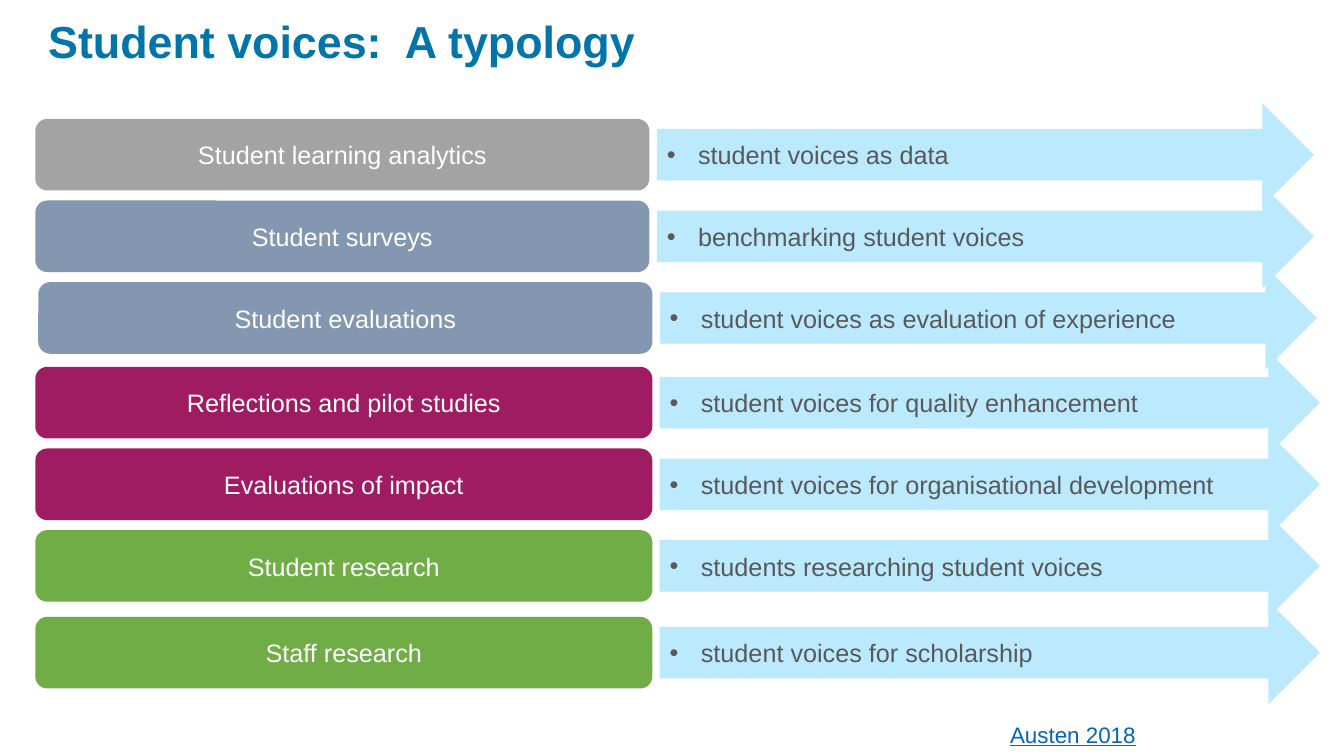
from dataclasses import dataclass

from lxml.etree import SubElement
from pptx import Presentation
from pptx.dml.color import RGBColor
from pptx.enum.shapes import MSO_SHAPE
from pptx.enum.text import MSO_ANCHOR, PP_ALIGN
from pptx.oxml.ns import qn
from pptx.shapes.autoshape import Shape
from pptx.slide import Slide
from pptx.text.text import _Paragraph
from pptx.util import Emu, Inches, Pt

WIDE = Inches(13.33)
HIGH = Inches(7.5)


@dataclass(frozen=True)
class Theme:
    font: str = "Arial"
    title: str = "0075AA"
    grey: str = "A3A3A3"
    slate: str = "8497B0"
    plum: str = "9F1C63"
    green: str = "70AD47"
    arrow: str = "BBEAFF"
    white: str = "FFFFFF"
    ink: str = "595959"
    link: str = "0563C1"
    large: int = 32
    body: int = 18
    small: int = 16


@dataclass(frozen=True)
class Box:
    left: float
    top: float
    width: float
    height: float

    def place(self) -> tuple[Emu, Emu, Emu, Emu]:
        return (
            Emu(round(WIDE * self.left / 100)),
            Emu(round(HIGH * self.top / 100)),
            Emu(round(WIDE * self.width / 100)),
            Emu(round(HIGH * self.height / 100)),
        )


@dataclass(frozen=True)
class Lane:
    left: float
    width: float


@dataclass(frozen=True)
class Row:
    label: str
    voice: str
    fill: str
    top: float
    lane: Lane


THEME = Theme()
PITCH = 10.8
UPPER = 15.73
LOWER = 48.53
LAST = 81.6
BAR_HIGH = 9.47
ARROW_HIGH = 13.6
ARROW_RATIO = 1.07
GAP = 0.55
INDENT = Inches(0.31)

SHORT = Lane(2.63, 45.69)
SHIFTED = Lane(2.85, 45.69)
LONG = Lane(2.63, 45.91)

ROWS = [
    Row("Student learning analytics", "student voices as data",
        THEME.grey, UPPER, SHORT),
    Row("Student surveys", "benchmarking student voices",
        THEME.slate, UPPER + PITCH, SHORT),
    Row("Student evaluations", "student voices as evaluation of experience",
        THEME.slate, UPPER + 2 * PITCH, SHIFTED),
    Row("Reflections and pilot studies", "student voices for quality enhancement",
        THEME.plum, LOWER, LONG),
    Row("Evaluations of impact", "student voices for organisational development",
        THEME.plum, LOWER + PITCH, LONG),
    Row("Student research", "students researching student voices",
        THEME.green, LOWER + 2 * PITCH, LONG),
    Row("Staff research", "student voices for scholarship",
        THEME.green, LAST, LONG),
]


def add_run(para: _Paragraph, text: str, size: int, colour: str,
            bold: bool = False, under: bool = False) -> None:
    run = para.add_run()
    run.text = text
    font = run.font
    font.name = THEME.font
    font.size = Pt(size)
    font.bold = bold
    font.underline = under
    font.color.rgb = RGBColor.from_string(colour)


def add_bullet(para: _Paragraph) -> None:
    props = para._p.get_or_add_pPr()
    props.set("marL", str(INDENT))
    props.set("indent", str(-INDENT))
    SubElement(props, qn("a:buFont"), typeface=THEME.font)
    SubElement(props, qn("a:buChar"), char="•")


def add_block(slide: Slide, kind: MSO_SHAPE, box: Box, fill: str) -> Shape:
    shape = slide.shapes.add_shape(kind, *box.place())
    shape.shadow.inherit = False
    shape.fill.solid()
    shape.fill.fore_color.rgb = RGBColor.from_string(fill)
    shape.line.fill.background()
    shape.text_frame.word_wrap = True
    shape.text_frame.vertical_anchor = MSO_ANCHOR.MIDDLE
    return shape


def add_text(slide: Slide, box: Box) -> _Paragraph:
    frame = slide.shapes.add_textbox(*box.place()).text_frame
    frame.word_wrap = True
    return frame.paragraphs[0]


def draw_row(slide: Slide, row: Row) -> None:
    lane = row.lane
    bar = add_block(slide, MSO_SHAPE.ROUNDED_RECTANGLE,
                    Box(lane.left, row.top, lane.width, BAR_HIGH), row.fill)
    label = bar.text_frame.paragraphs[0]
    label.alignment = PP_ALIGN.CENTER
    add_run(label, row.label, THEME.body, THEME.white)

    area = Box(lane.left + lane.width + GAP,
               row.top - (ARROW_HIGH - BAR_HIGH) / 2,
               lane.width * ARROW_RATIO, ARROW_HIGH)
    arrow = add_block(slide, MSO_SHAPE.RIGHT_ARROW, area, THEME.arrow)
    voice = arrow.text_frame.paragraphs[0]
    voice.alignment = PP_ALIGN.LEFT
    add_bullet(voice)
    add_run(voice, row.voice, THEME.body, THEME.ink)


def main() -> None:
    deck = Presentation()
    deck.slide_width = WIDE
    deck.slide_height = HIGH
    slide = deck.slides.add_slide(deck.slide_layouts[6])

    title = add_text(slide, Box(2.85, 2, 90, 11.87))
    title.line_spacing = 0.9
    add_run(title, "Student voices:  A typology", THEME.large, THEME.title, bold=True)

    for row in ROWS:
        draw_row(slide, row)

    source = add_text(slide, Box(74.42, 94.67, 16.5, 4.93))
    add_run(source, "Austen 2018", THEME.small, THEME.link, under=True)
    deck.save("out.pptx")


if __name__ == "__main__":
    main()
